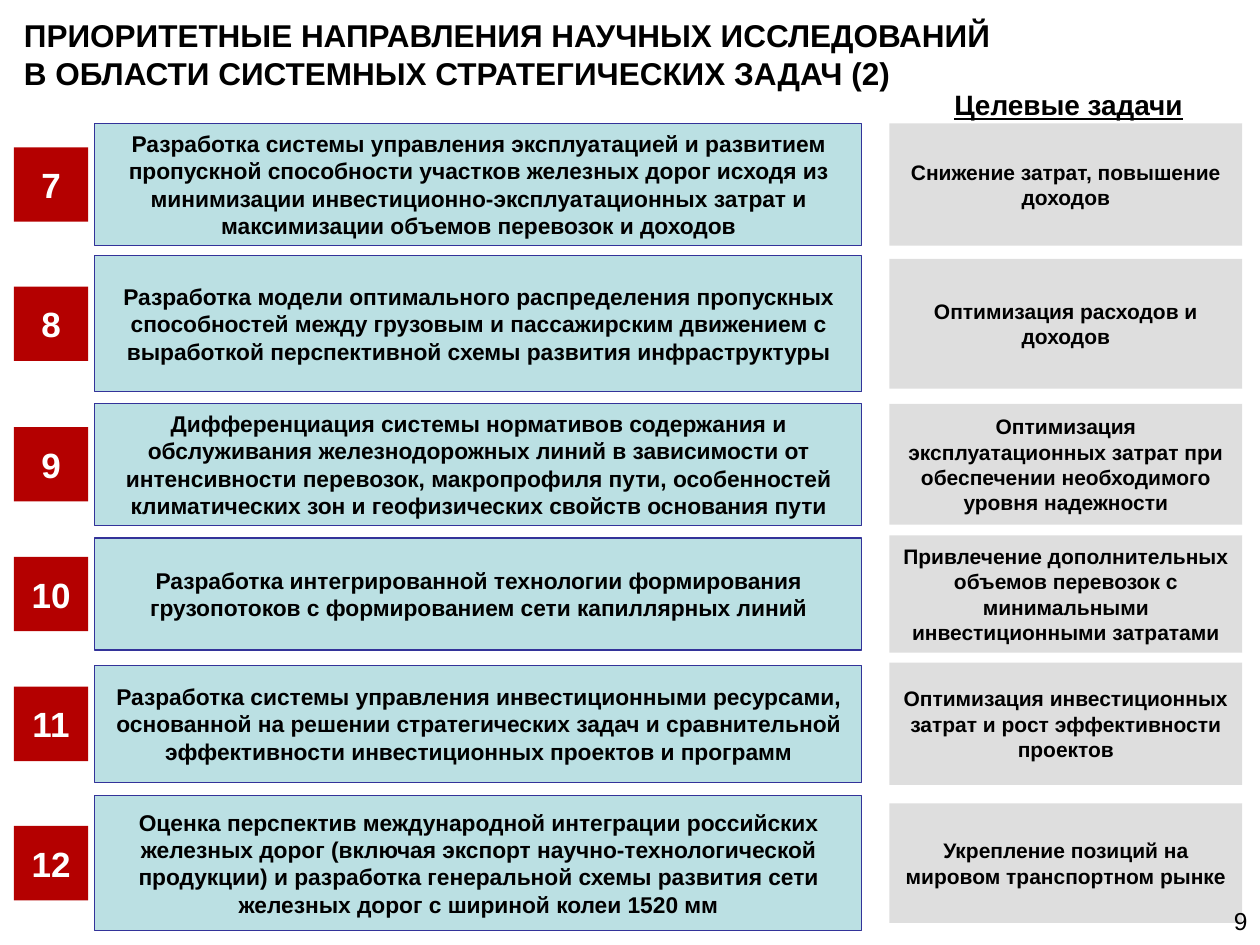
from lxml.etree import SubElement
from pptx import Presentation
from pptx.dml.color import RGBColor
from pptx.enum.shapes import MSO_SHAPE
from pptx.enum.text import MSO_ANCHOR, MSO_AUTO_SIZE, PP_ALIGN
from pptx.oxml.ns import qn
from pptx.util import Inches, Pt

# Columns: left, width
BADGE_COLUMN = (0.11, 0.59)
TOPIC_COLUMN = (0.75, 6.09)
TARGET_COLUMN = (7.06, 2.8)
FIRST_NUMBER = 7

# Rows: centre, topic height, target height, topic, target
ROWS = [
    (1.465, 0.97, 0.97,
     "Разработка системы управления эксплуатацией и развитием пропускной способности "
     "участков железных дорог исходя из минимизации инвестиционно-эксплуатационных "
     "затрат и максимизации объемов перевозок и доходов",
     "Снижение затрат, повышение доходов"),
    (2.57, 1.08, 1.03,
     "Разработка модели оптимального распределения пропускных способностей между "
     "грузовым и пассажирским движением с выработкой перспективной схемы развития "
     "инфраструктуры",
     "Оптимизация расходов и доходов"),
    (3.685, 0.97, 0.96,
     "Дифференциация системы нормативов содержания и обслуживания железнодорожных "
     "линий в зависимости от интенсивности перевозок, макропрофиля пути, особенностей "
     "климатических зон и геофизических свойств основания пути",
     "Оптимизация эксплуатационных затрат при обеспечении необходимого уровня надежности"),
    (4.715, 0.89, 0.93,
     "Разработка интегрированной технологии формирования грузопотоков с формированием "
     "сети капиллярных линий",
     "Привлечение дополнительных объемов перевозок с минимальными инвестиционными затратами"),
    (5.745, 0.93, 0.97,
     "Разработка системы управления инвестиционными ресурсами, основанной на решении "
     "стратегических задач и сравнительной эффективности инвестиционных проектов и программ",
     "Оптимизация инвестиционных затрат и рост эффективности проектов"),
    (6.85, 1.07, 0.95,
     "Оценка перспектив международной интеграции российских железных дорог (включая "
     "экспорт научно-технологической продукции) и разработка генеральной схемы развития "
     "сети железных дорог с шириной колеи 1520 мм",
     "Укрепление позиций на мировом транспортном рынке"),
]


def color(value):
    return RGBColor.from_string(value)


def write(shape, text, size, font_color="000000", bold=True,
          align=PP_ALIGN.CENTER, anchor=MSO_ANCHOR.MIDDLE, side_inset=0.1):
    frame = shape.text_frame
    frame.text = text
    frame.word_wrap = True
    frame.auto_size = MSO_AUTO_SIZE.NONE
    frame.vertical_anchor = anchor
    frame.margin_left = frame.margin_right = Inches(side_inset)
    paragraph = frame.paragraphs[0]
    paragraph.alignment = align
    font = paragraph.font
    font.name, font.size, font.bold = "Arial", Pt(size), bold
    font.color.rgb = color(font_color)
    return paragraph


def add_box(shapes, column, centre, height, fill, line=None, opacity=None):
    """Add a rectangle in a column, centred vertically on its row."""
    left, width = column
    box = shapes.add_shape(MSO_SHAPE.RECTANGLE, Inches(left), Inches(centre - height / 2),
                           Inches(width), Inches(height))
    box.shadow.inherit = False
    box.fill.solid()
    box.fill.fore_color.rgb = color(fill)
    if line:
        box.line.color.rgb = color(line)
        box.line.width = Pt(0.75)
    else:
        box.line.fill.background()
    if opacity:
        fill_color = box.fill._xPr.find(qn("a:solidFill"))[0]
        SubElement(fill_color, qn("a:alpha"), val=str(opacity * 1000))
    return box


def add_row(slide, number, centre, topic_height, target_height, topic, target):
    shapes = slide.shapes.add_group_shape().shapes
    target_box = add_box(shapes, TARGET_COLUMN, centre, target_height, "C0C0C0", opacity=51)
    write(target_box, target, 12)
    topic_box = add_box(shapes, TOPIC_COLUMN, centre, topic_height, "BBE0E3", line="333399")
    write(topic_box, topic, 13)
    badge = add_box(shapes, BADGE_COLUMN, centre, BADGE_COLUMN[1], "B40000")
    write(badge, str(number), 20, "FFFFFF", side_inset=0)


def add_label(slide, left, top, width, height, text, size, **style):
    label = slide.shapes.add_textbox(Inches(left), Inches(top), Inches(width), Inches(height))
    return write(label, text, size, **style)


def set_title(slide, text):
    title = slide.shapes.title
    title.left, title.top = Inches(0.19), Inches(0.11)
    title.width, title.height = Inches(7.87), Inches(0.63)
    write(title, text, 18, align=PP_ALIGN.LEFT, side_inset=0)


def main():
    presentation = Presentation()
    presentation.slide_width, presentation.slide_height = Inches(10), Inches(7.5)
    slide = presentation.slides.add_slide(presentation.slide_layouts[5])
    set_title(slide, "ПРИОРИТЕТНЫЕ НАПРАВЛЕНИЯ НАУЧНЫХ ИССЛЕДОВАНИЙ "
                     "В ОБЛАСТИ СИСТЕМНЫХ СТРАТЕГИЧЕСКИХ ЗАДАЧ (2)")
    heading = add_label(slide, 7.34, 0.61, 2.28, 0.44, "Целевые задачи", 16)
    heading.font.underline = True
    for number, row in enumerate(ROWS, FIRST_NUMBER):
        add_row(slide, number, *row)
    add_label(slide, 9.64, 7.14, 0.36, 0.36, "9", 14, bold=False,
              align=PP_ALIGN.RIGHT, anchor=MSO_ANCHOR.TOP)
    presentation.save("out.pptx")


if __name__ == "__main__":
    main()
